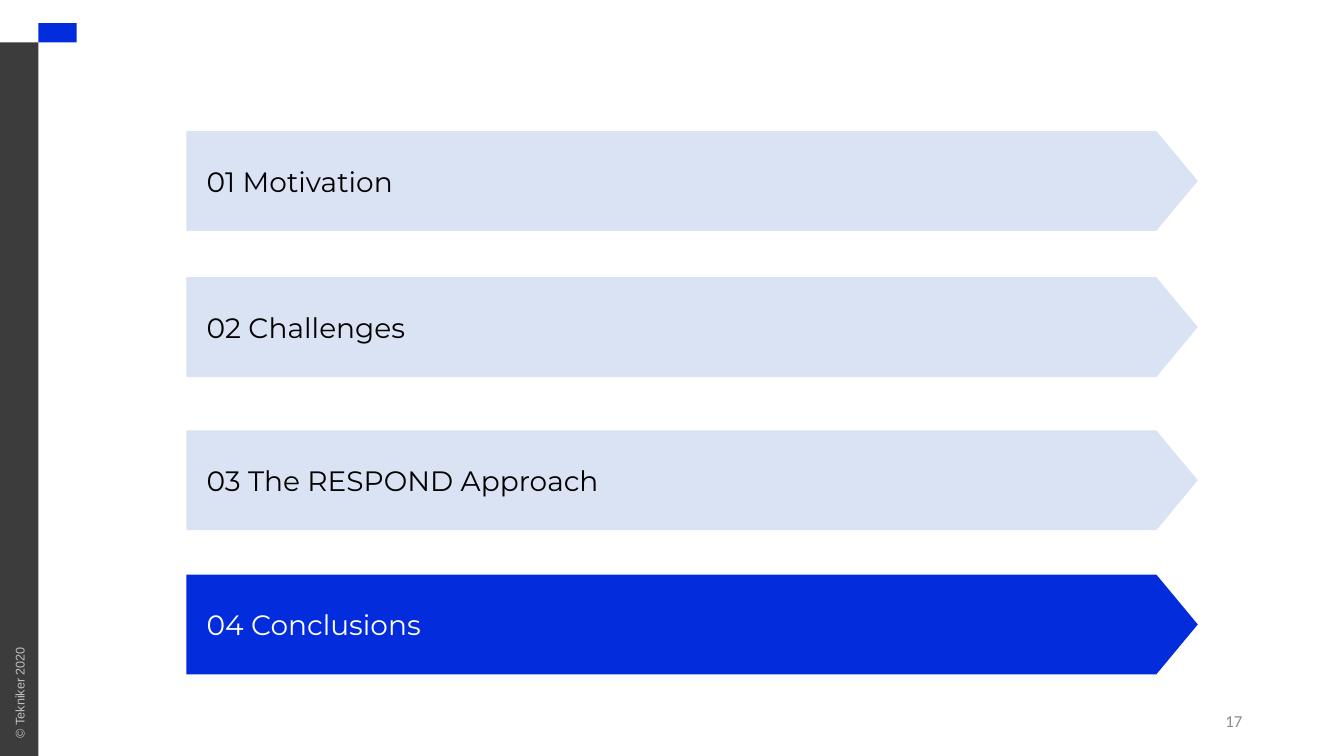
from pptx import Presentation
from pptx.dml.color import RGBColor
from pptx.enum.shapes import MSO_SHAPE as Preset
from pptx.enum.text import MSO_ANCHOR as Anchor, PP_ALIGN as Align
from pptx.util import Inches, Pt

BLUE, PALE, GREY = "032CDD", "DAE3F3", "3C3C3C"
RAIL = 0.38
AGENDA = [
    ("01 Motivation", 1.3),
    ("02 Challenges", 2.75),
    ("03 The RESPOND Approach", 4.27),
    ("04 Conclusions", 5.7),
]
CURRENT = "04 Conclusions"


def colour(hex_code):
    return RGBColor.from_string(hex_code)


def add_block(page, preset, area, fill):
    block = page.shapes.add_shape(preset, *map(Inches, area))
    block.shadow.inherit = False
    block.fill.solid()
    block.fill.fore_color.rgb = colour(fill)
    block.line.fill.background()
    return block


def write(box, text, font, size, ink, align):
    para = box.text_frame.paragraphs[0]
    para.alignment = align
    span = para.add_run()
    span.text = text
    span.font.name = font
    span.font.size = Pt(size)
    span.font.color.rgb = colour(ink)


def add_label(page, area, text, font, size, ink, align, wrap=True):
    box = page.shapes.add_textbox(*map(Inches, area))
    box.text_frame.word_wrap = wrap
    box.text_frame.vertical_anchor = Anchor.MIDDLE
    write(box, text, font, size, ink, align)
    return box


def add_agenda_arrow(page, text, top):
    active = text == CURRENT
    arrow = add_block(page, Preset.PENTAGON, (1.85, top, 10.03, 0.99),
                      BLUE if active else PALE)
    arrow.adjustments[0] = 0.415
    frame = arrow.text_frame
    frame.word_wrap = True
    frame.vertical_anchor = Anchor.MIDDLE
    frame.margin_left = frame.margin_right = Inches(0.2)
    write(arrow, text, "Montserrat", 20, "FFFFFF" if active else "000000",
          Align.JUSTIFY)


def main():
    deck = Presentation()
    deck.slide_width, deck.slide_height = Inches(13.33), Inches(7.5)
    page = deck.slides.add_slide(deck.slide_layouts[6])

    add_block(page, Preset.RECTANGLE, (0, 0.42, RAIL, 7.08), GREY)
    add_block(page, Preset.RECTANGLE, (RAIL, 0.23, RAIL, 0.19), BLUE)
    rights = add_label(page, (-0.37, 6.73, 1.13, 0.25), "© Tekniker 2020",
                       "Arial", 9, "BFBFBF", Align.LEFT, wrap=False)
    rights.rotation = 270
    add_label(page, (9.42, 6.95, 3, 0.4), "17", "Calibri", 12, "8C8C8C",
              Align.RIGHT)
    for text, top in AGENDA:
        add_agenda_arrow(page, text, top)

    deck.save("out.pptx")


if __name__ == "__main__":
    main()
